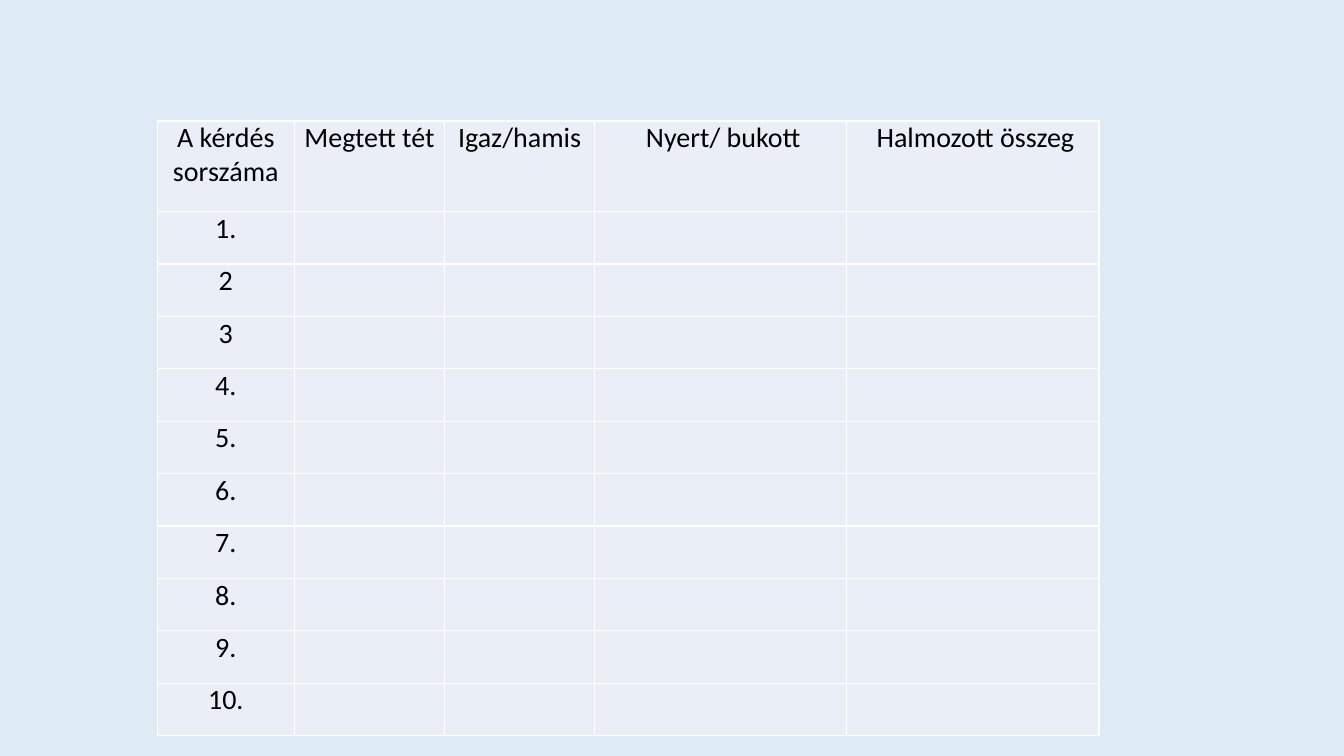
from pptx import Presentation
from pptx.dml.color import RGBColor
from pptx.enum.text import PP_ALIGN as Align
from pptx.oxml.ns import qn
from pptx.util import Inches, Pt
from lxml.etree import SubElement

COLORS = {"background": "DEEBF7", "cell": "EAEFF7", "border": "FFFFFF", "text": "000000"}
HEADERS = ["A kérdés sorszáma", "Megtett tét", "Igaz/hamis", "Nyert/ bukott", "Halmozott összeg"]
INDENTED_HEADERS = HEADERS[3:]
QUESTIONS = ["1.", "2", "3"] + [f"{number}." for number in range(4, 11)]
COLUMN_WIDTHS = [1.36, 1.49, 1.49, 2.5, 2.5]
ROW_HEIGHTS = [0.9] + [0.52] * len(QUESTIONS)


class SlideBuilder:
    """Holds the slide and the style of its table."""

    font_name = "Calibri"
    font_size = Pt(20)
    margin = Inches(0.05)
    border_width = Pt(1)

    def __init__(self, slide):
        self.slide = slide

    def color(self, name):
        return RGBColor.from_string(COLORS[name])

    def background(self):
        fill = self.slide.background.fill
        fill.solid()
        fill.fore_color.rgb = self.color("background")

    def borders(self, cell):
        properties = cell._tc.get_or_add_tcPr()
        for side in ("lnL", "lnR", "lnT", "lnB"):
            line = SubElement(properties, qn(f"a:{side}"), w=str(self.border_width))
            fill = SubElement(line, qn("a:solidFill"))
            SubElement(fill, qn("a:srgbClr"), val=COLORS["border"])

    def cell(self, cell, text):
        self.borders(cell)
        cell.fill.solid()
        cell.fill.fore_color.rgb = self.color("cell")
        cell.margin_left = cell.margin_right = self.margin
        cell.margin_top = cell.margin_bottom = 0
        paragraph = cell.text_frame.paragraphs[0]
        paragraph.text = text
        paragraph.alignment = Align.CENTER
        paragraph.font.name = self.font_name
        paragraph.font.size = self.font_size
        paragraph.font.bold = False
        paragraph.font.color.rgb = self.color("text")
        if text in INDENTED_HEADERS:
            properties = paragraph._p.get_or_add_pPr()
            properties.set("marL", "0")
            properties.set("indent", str(self.margin))

    def table(self, left, top, widths, heights, rows):
        frame = self.slide.shapes.add_table(
            len(heights), len(widths), Inches(left), Inches(top),
            Inches(sum(widths)), Inches(sum(heights)))
        table = frame.table
        table.horz_banding = False
        for column, width in zip(table.columns, widths):
            column.width = Inches(width)
        for row, height, texts in zip(table.rows, heights, rows):
            row.height = Inches(height)
            for cell, text in zip(row.cells, texts):
                self.cell(cell, text)


def main():
    presentation = Presentation()
    presentation.slide_width = Inches(13.33)
    presentation.slide_height = Inches(7.5)
    builder = SlideBuilder(presentation.slides.add_slide(presentation.slide_layouts[6]))
    builder.background()
    blanks = [""] * (len(HEADERS) - 1)
    rows = [HEADERS] + [[question] + blanks for question in QUESTIONS]
    builder.table(1.56, 1.2, COLUMN_WIDTHS, ROW_HEIGHTS, rows)
    presentation.save("out.pptx")


if __name__ == "__main__":
    main()
